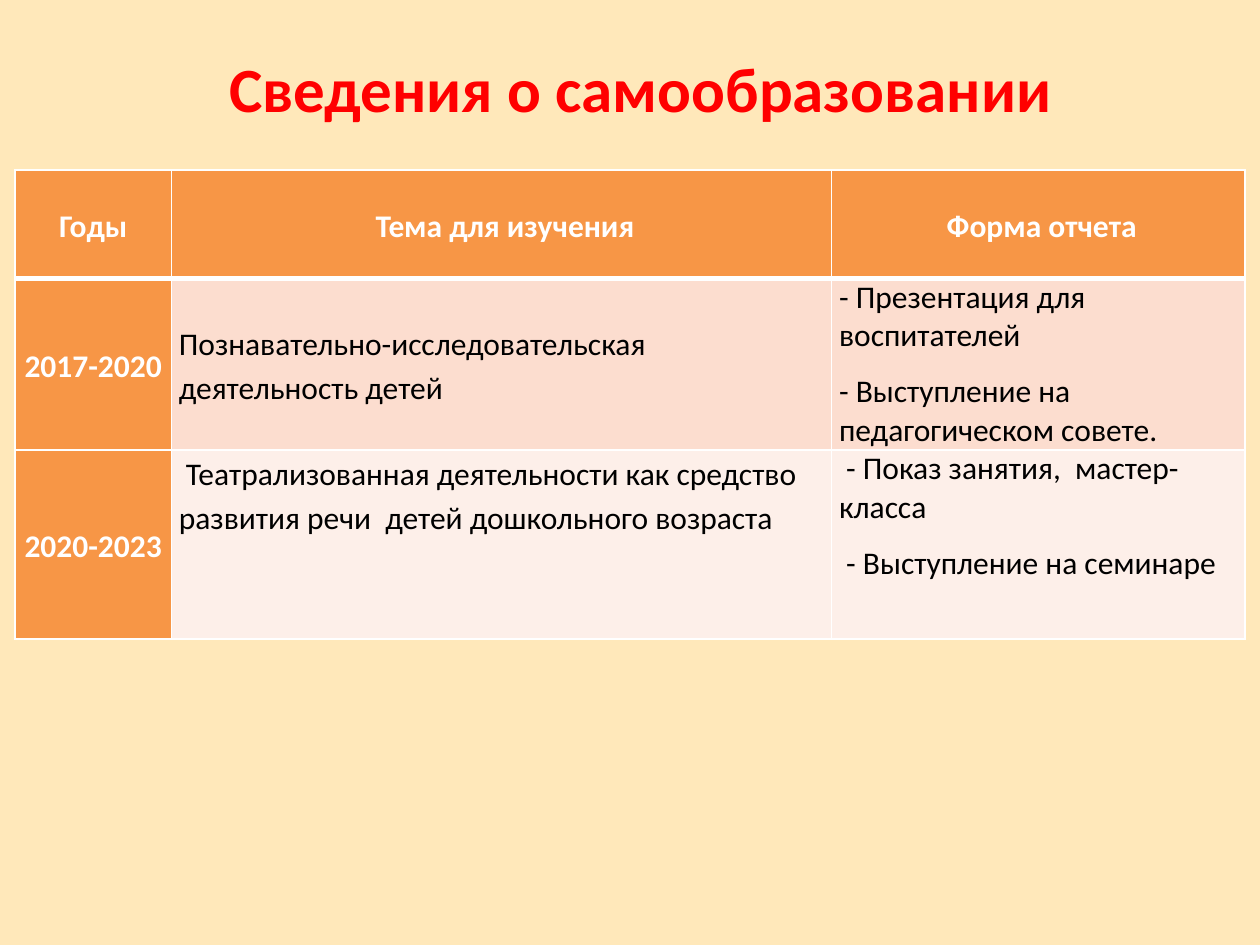
from lxml.etree import SubElement
from pptx import Presentation
from pptx.dml.color import RGBColor
from pptx.enum.text import MSO_ANCHOR, MSO_AUTO_SIZE, PP_ALIGN
from pptx.oxml.ns import qn
from pptx.util import Inches, Pt

COLORS = {
    "background": "FFE8BA",
    "title": "FF0000",
    "accent": "F79646",
    "band_dark": "FCDDCF",
    "band_light": "FDEFE9",
    "white": "FFFFFF",
    "black": "000000",
}
COLUMN_WIDTHS = [1.24, 5.24, 3.28]
ROW_HEIGHTS = [0.86, 1.36, 1.5]
ROWS = [
    ["Годы", " Тема для изучения", " Форма отчета"],
    [
        "2017-2020",
        "Познавательно-исследовательская деятельность детей",
        "- Презентация для воспитателей\n- Выступление на педагогическом совете.",
    ],
    [
        "2020-2023",
        " Театрализованная деятельности как средство развития речи  детей дошкольного возраста",
        " - Показ занятия,  мастер-класса\n - Выступление на семинаре",
    ],
]


class SlideBuilder:
    font_name = "Calibri"

    def __init__(self, slide):
        self.slide = slide

    def color(self, name):
        return RGBColor.from_string(COLORS[name])

    def background(self, name):
        fill = self.slide.background.fill
        fill.solid()
        fill.fore_color.rgb = self.color(name)

    def style_runs(self, paragraph, size, color, bold):
        for run in paragraph.runs:
            run.font.name = self.font_name
            run.font.size = Pt(size)
            run.font.bold = bold
            run.font.color.rgb = self.color(color)

    def title(self, text, left, top, width, height):
        box = self.slide.shapes.add_textbox(
            Inches(left), Inches(top), Inches(width), Inches(height))
        frame = box.text_frame
        frame.word_wrap = True
        frame.auto_size = MSO_AUTO_SIZE.SHAPE_TO_FIT_TEXT
        frame.vertical_anchor = MSO_ANCHOR.MIDDLE
        frame.text = text
        heading = frame.paragraphs[0]
        heading.alignment = PP_ALIGN.CENTER
        heading._p.get_or_add_pPr().set("indent", str(Inches(0.49)))
        self.style_runs(heading, 36, "title", True)

    def border(self, cell, side, width):
        line = SubElement(cell._tc.get_or_add_tcPr(), qn(f"a:ln{side}"), w=str(Pt(width)))
        fill = SubElement(line, qn("a:solidFill"))
        SubElement(fill, qn("a:srgbClr"), val=COLORS["white"])

    def cell(self, cell, text, row, column):
        is_heading = row == 0 or column == 0
        for side in "LRTB":
            thick = (row, side) in [(0, "B"), (1, "T")]
            self.border(cell, side, 3 if thick else 1)
        cell.fill.solid()
        band = "band_dark" if row == 1 else "band_light"
        cell.fill.fore_color.rgb = self.color("accent" if is_heading else band)
        cell.margin_left = cell.margin_right = Inches(0.06)
        cell.margin_top = cell.margin_bottom = 0
        at_top = row == 2 and not is_heading
        cell.vertical_anchor = MSO_ANCHOR.TOP if at_top else MSO_ANCHOR.MIDDLE
        cell.text_frame.text = text
        for paragraph in cell.text_frame.paragraphs:
            paragraph.alignment = PP_ALIGN.CENTER if is_heading else PP_ALIGN.LEFT
            paragraph.line_spacing = 1.15 if row == 0 or column < 2 else 1.0
            paragraph.space_after = Pt(10)
            self.style_runs(paragraph, 18, "white" if is_heading else "black", is_heading)

    def table(self, rows, left, top, widths, heights):
        table = self.slide.shapes.add_table(
            len(rows), len(widths), Inches(left), Inches(top),
            Inches(sum(widths)), Inches(sum(heights))).table
        for column, width in zip(table.columns, widths):
            column.width = Inches(width)
        for row, height in zip(table.rows, heights):
            row.height = Inches(height)
        for row, texts in enumerate(rows):
            for column, text in enumerate(texts):
                self.cell(table.cell(row, column), text, row, column)


def main():
    presentation = Presentation()
    presentation.slide_width = Inches(10)
    presentation.slide_height = Inches(7.5)
    builder = SlideBuilder(presentation.slides.add_slide(presentation.slide_layouts[6]))
    builder.background("background")
    builder.table(ROWS, 0.12, 1.35, COLUMN_WIDTHS, ROW_HEIGHTS)
    builder.title("Сведения о самообразовании", 0.51, 0.34, 8.66, 0.71)
    presentation.save("out.pptx")


if __name__ == "__main__":
    main()
